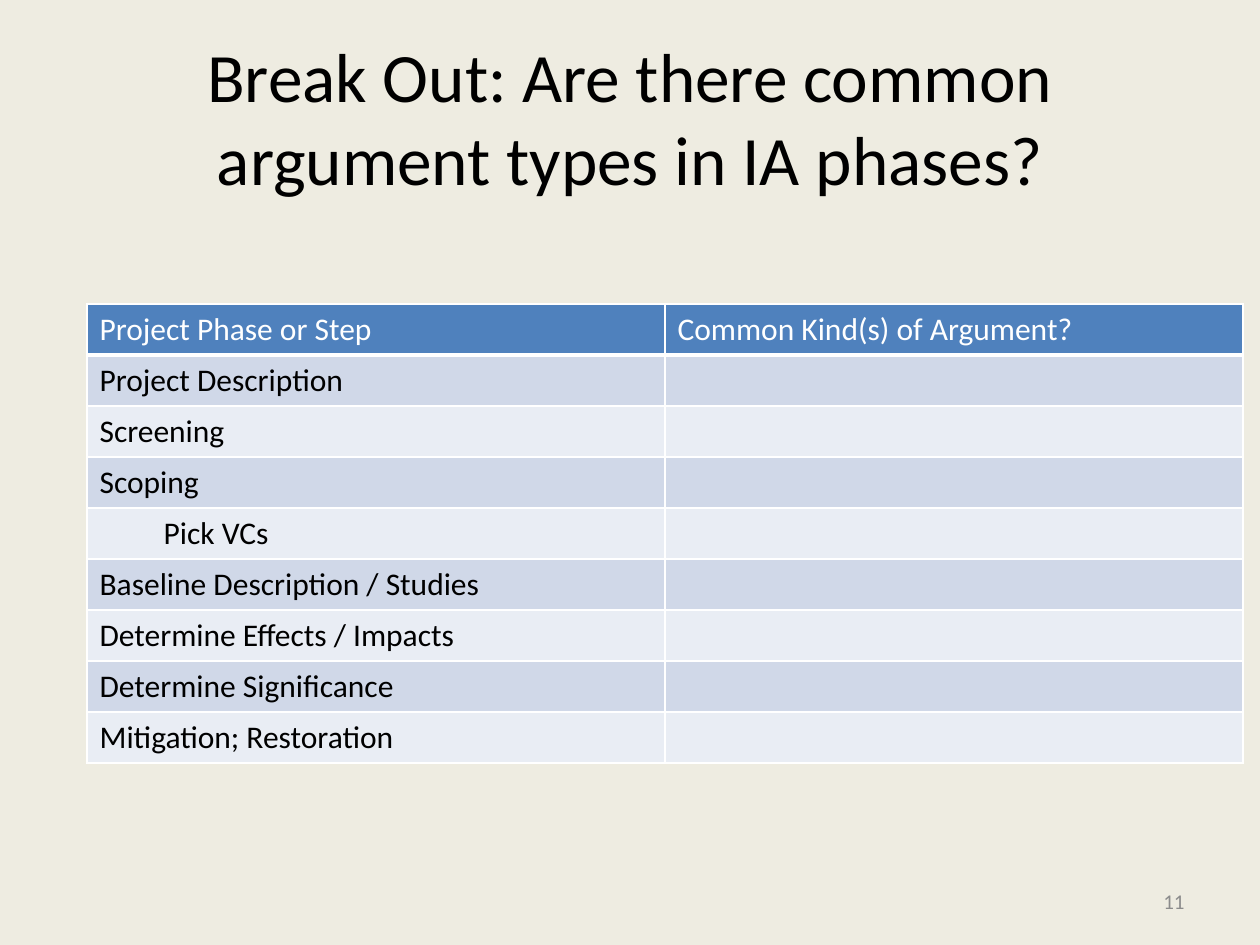
"""Build the slide asking for common argument types in each IA phase."""
from dataclasses import dataclass

from lxml import etree
from pptx import Presentation
from pptx import util as u
from pptx.dml import color
from pptx.enum import text
from pptx.oxml import ns

PX_PER_INCH = 126
FONT = "Calibri"
COLORS = {
    "background": "EEECE1",
    "black": "000000",
    "white": "FFFFFF",
    "number": "8C8C8C",
    "header": "4F81BD",
    "odd": "D0D8E8",
    "even": "E9EDF4",
}


@dataclass(frozen=True)
class Box:
    left: int
    top: int
    width: int
    height: int


@dataclass(frozen=True)
class Label:
    words: str
    box: Box
    size: float
    color: str
    align: text.PP_ALIGN


@dataclass(frozen=True)
class Row:
    step: str
    question: str = ""
    indent: int = 0


LABELS = [
    Label("Break Out: Are there common argument types in IA phases?",
          Box(63, 38, 1134, 157), 39.6, "black", text.PP_ALIGN.CENTER),
    Label("11", Box(903, 876, 294, 50), 12, "number", text.PP_ALIGN.RIGHT),
]
TABLE = Box(87, 304, 1156, 459)
ROWS = [
    Row("Project Phase or Step", "Common Kind(s) of Argument?"),
    Row("Project Description"),
    Row("Screening"),
    Row("Scoping"),
    Row("Pick VCs", indent=64),
    Row("Baseline Description / Studies"),
    Row("Determine Effects / Impacts"),
    Row("Determine Significance"),
    Row("Mitigation; Restoration"),
]


def px(length: int) -> u.Emu:
    return u.Emu(round(length * 914400 / PX_PER_INCH))


def place(box: Box) -> tuple:
    return px(box.left), px(box.top), px(box.width), px(box.height)


def rgb(name: str) -> color.RGBColor:
    return color.RGBColor.from_string(COLORS[name])


def add_run(paragraph, words: str, size: float, color_name: str) -> None:
    run = paragraph.add_run()
    run.text = words
    run.font.name = FONT
    run.font.size = u.Pt(size)
    run.font.bold = False
    run.font.color.rgb = rgb(color_name)


def add_label(slide, label: Label) -> None:
    frame = slide.shapes.add_textbox(*place(label.box)).text_frame
    frame.word_wrap = True
    frame.vertical_anchor = text.MSO_ANCHOR.MIDDLE
    paragraph = frame.paragraphs[0]
    paragraph.alignment = label.align
    add_run(paragraph, label.words, label.size, label.color)


def set_borders(cell, bottom_points: int) -> None:
    properties = cell._tc.get_or_add_tcPr()
    widths = {"lnL": 1, "lnR": 1, "lnT": 1, "lnB": bottom_points}
    for index, (side, points) in enumerate(widths.items()):
        line = etree.Element(ns.qn(f"a:{side}"), w=str(u.Pt(points)))
        fill = etree.SubElement(line, ns.qn("a:solidFill"))
        etree.SubElement(fill, ns.qn("a:srgbClr"), val=COLORS["white"])
        properties.insert(index, line)


def fill_cell(cell, words: str, indent: int, fill: str) -> None:
    is_header = fill == "header"
    cell.fill.solid()
    cell.fill.fore_color.rgb = rgb(fill)
    set_borders(cell, 3 if is_header else 1)
    paragraph = cell.text_frame.paragraphs[0]
    if indent:
        paragraph._p.get_or_add_pPr().set("marL", str(px(indent)))
    if words:
        add_run(paragraph, words, 18, "white" if is_header else "black")


def add_phase_table(slide, rows: list[Row], box: Box) -> None:
    table = slide.shapes.add_table(len(rows), 2, *place(box)).table
    for number, row in enumerate(rows):
        fill = "header" if number == 0 else "odd" if number % 2 else "even"
        fill_cell(table.cell(number, 0), row.step, row.indent, fill)
        fill_cell(table.cell(number, 1), row.question, 0, fill)


def main() -> None:
    presentation = Presentation()
    presentation.slide_width = px(1260)
    presentation.slide_height = px(945)
    slide = presentation.slides.add_slide(presentation.slide_layouts[6])
    slide.background.fill.solid()
    slide.background.fill.fore_color.rgb = rgb("background")
    title, slide_number = LABELS
    add_label(slide, title)
    add_phase_table(slide, ROWS, TABLE)
    add_label(slide, slide_number)
    presentation.save("out.pptx")


if __name__ == "__main__":
    main()
